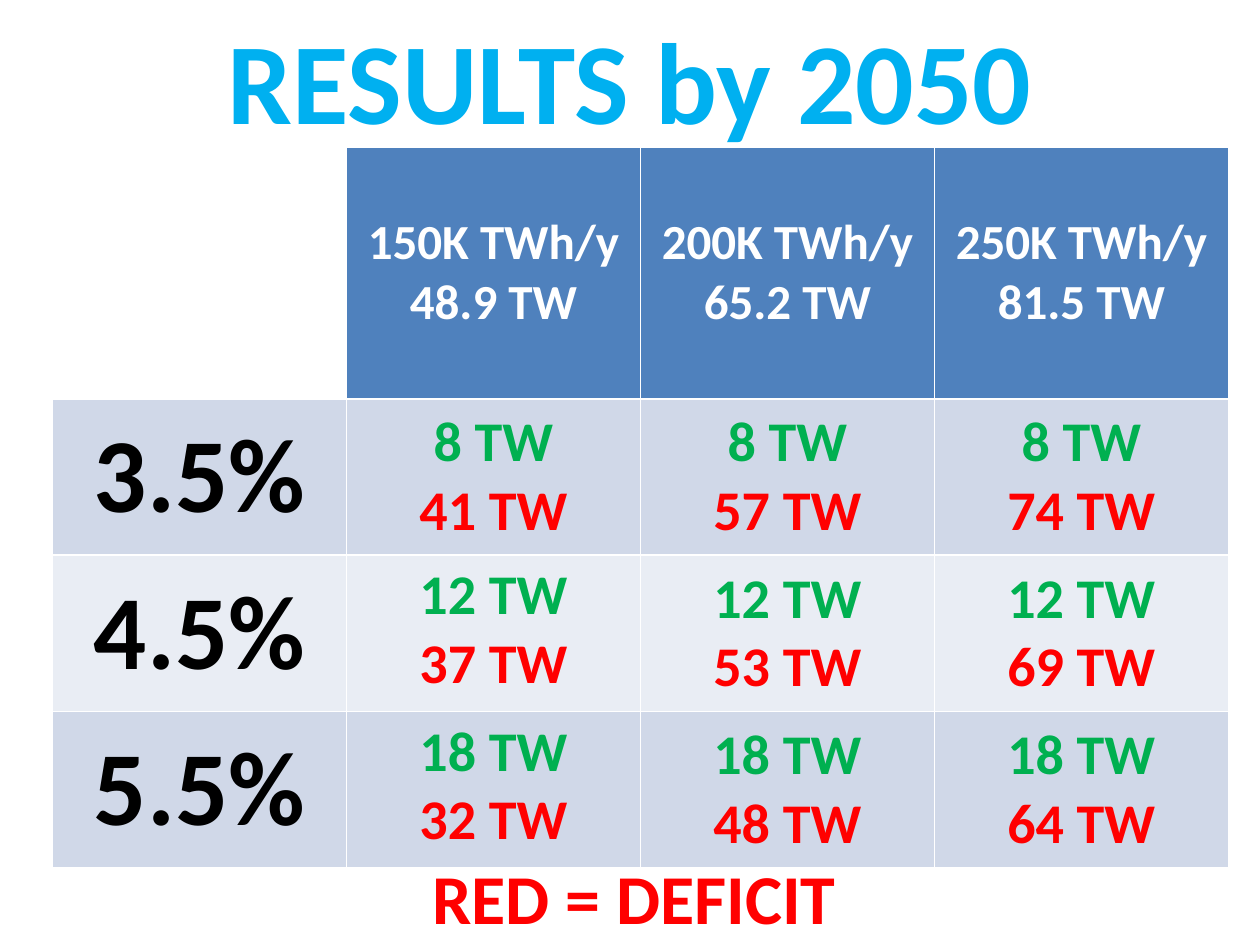
import pptx
import pptx.dml.color
import pptx.enum.text
import pptx.util

Pt = pptx.util.Pt
RGBColor = pptx.dml.color.RGBColor
CENTER = pptx.enum.text.PP_ALIGN.CENTER
LEFT = pptx.enum.text.PP_ALIGN.LEFT
TOP = pptx.enum.text.MSO_ANCHOR.TOP
MIDDLE = pptx.enum.text.MSO_ANCHOR.MIDDLE

SKY = RGBColor(0x00, 0xB0, 0xF0)
BLUE = RGBColor(0x4F, 0x81, 0xBD)
BAND_DARK = RGBColor(0xD0, 0xD8, 0xE8)
BAND_LIGHT = RGBColor(0xE9, 0xED, 0xF4)
GREEN = RGBColor(0x00, 0xB0, 0x50)
RED = RGBColor(0xFF, 0x00, 0x00)
BLACK = RGBColor(0x00, 0x00, 0x00)
WHITE = RGBColor(0xFF, 0xFF, 0xFF)

# Demand scenarios across, growth rates down: (supply, deficits)
DEMANDS = ["150K TWh/y\v48.9 TW", "200K TWh/y\v65.2 TW", "250K TWh/y\v81.5 TW"]
RESULTS = {
    "3.5%": (8, (41, 57, 74)),
    "4.5%": (12, (37, 53, 69)),
    "5.5%": (18, (32, 48, 64)),
}


class Deck:
    font = "Calibri"

    def __init__(self, prs):
        self.slide = prs.slides.add_slide(prs.slide_layouts[5])

    def fill_text(self, tf, lines, size, align=CENTER):
        """Fill a text frame with one paragraph per (text, colour) pair."""
        for i, (text, color) in enumerate(lines):
            p = tf.add_paragraph() if i else tf.paragraphs[0]
            p.text = text
            p.alignment = align
            p.font.name = self.font
            p.font.size = Pt(size)
            p.font.bold = True
            p.font.color.rgb = color

    def title(self, text, left, top, width, height, size, color):
        sp = self.slide.shapes.title
        sp.left, sp.top, sp.width, sp.height = map(Pt, (left, top, width, height))
        sp.text_frame.vertical_anchor = MIDDLE
        self.fill_text(sp.text_frame, [(text, color)], size)

    def table(self, left, top, col_width, row_heights, cols):
        frame = self.slide.shapes.add_table(
            len(row_heights), cols, Pt(left), Pt(top),
            Pt(col_width * cols), Pt(sum(row_heights)))
        table = frame.table
        for col in table.columns:
            col.width = Pt(col_width)
        for row, height in zip(table.rows, row_heights):
            row.height = Pt(height)
        return table

    def cell(self, cell, fill, lines=(), size=32, anchor=MIDDLE):
        cell.fill.solid()
        cell.fill.fore_color.rgb = fill
        cell.vertical_anchor = anchor
        self.fill_text(cell.text_frame, lines, size)

    def label(self, text, left, top, width, height, size, color):
        sp = self.slide.shapes.add_textbox(*map(Pt, (left, top, width, height)))
        sp.text_frame.word_wrap = True
        self.fill_text(sp.text_frame, [(text, color)], size, LEFT)


def main():
    prs = pptx.Presentation()
    prs.slide_width, prs.slide_height = Pt(720), Pt(540)
    deck = Deck(prs)

    deck.title("RESULTS by 2050", 36, 0, 648, 90, 66, SKY)

    # Header row
    table = deck.table(30, 84.4, 168, [143.5] + [89.4] * 3, 4)
    deck.cell(table.cell(0, 0), WHITE)
    for c, demand in enumerate(DEMANDS, 1):
        deck.cell(table.cell(0, c), BLUE, [(demand, WHITE)], 28)

    # Growth rows: supply in green, deficit in red
    for r, (rate, (supply, deficits)) in enumerate(RESULTS.items(), 1):
        band = BAND_DARK if r % 2 else BAND_LIGHT
        deck.cell(table.cell(r, 0), band, [(rate, BLACK)], 60)
        for c, deficit in enumerate(deficits, 1):
            anchor = TOP if c == 1 and r > 1 else MIDDLE
            lines = [(f"{supply} TW", GREEN), (f"{deficit} TW", RED)]
            deck.cell(table.cell(r, c), band, lines, anchor=anchor)

    # Legend
    deck.label("RED = DEFICIT", 240, 484.5, 252, 55.5, 40, RED)

    prs.save("out.pptx")


if __name__ == "__main__":
    main()
